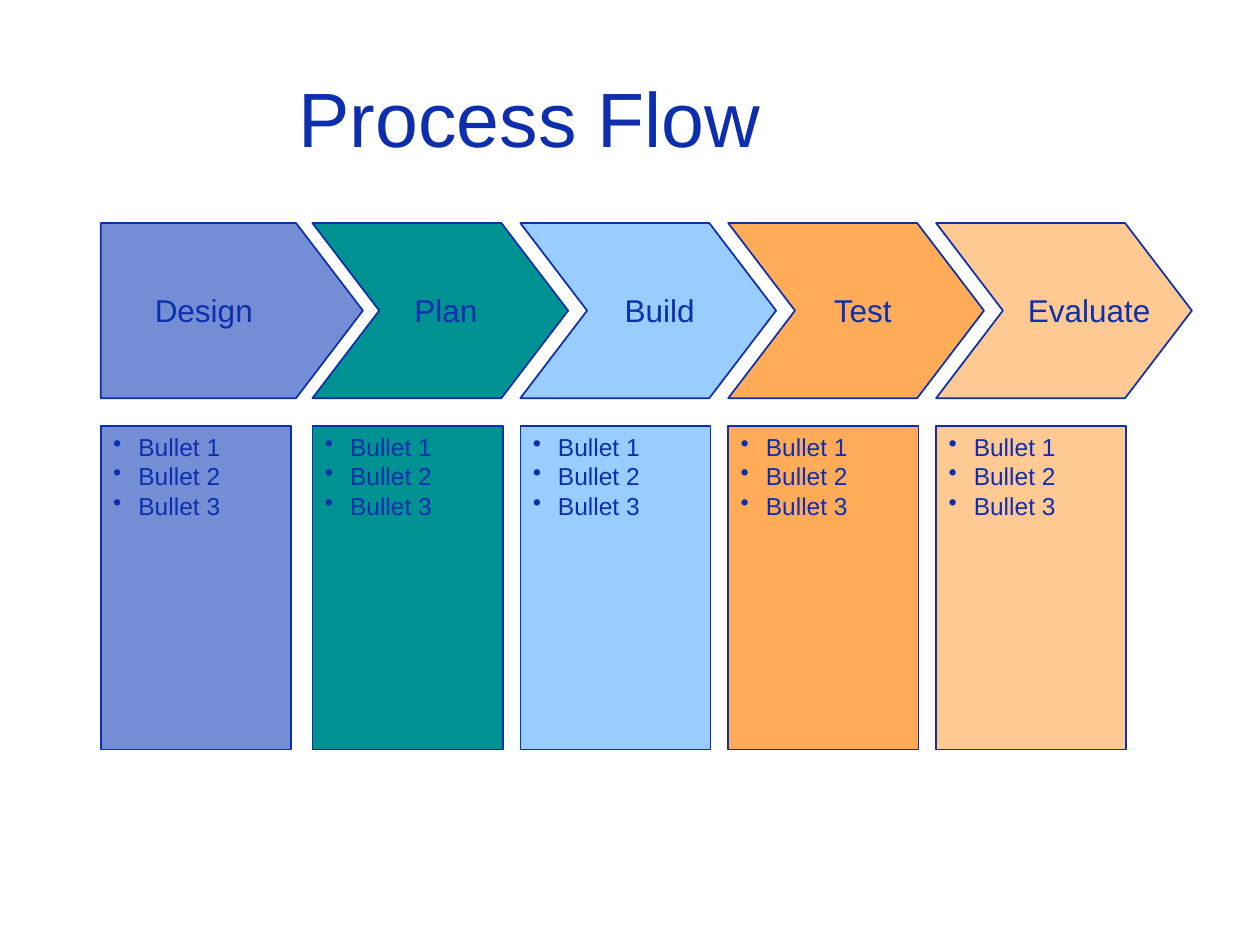
from pptx import Presentation
from pptx.dml.color import RGBColor
from pptx.enum.shapes import MSO_SHAPE
from pptx.enum.text import MSO_ANCHOR, MSO_AUTO_SIZE, PP_ALIGN
from pptx.oxml.xmlchemy import OxmlElement
from pptx.util import Inches, Pt

BLUE = RGBColor(0x0E, 0x2F, 0xAD)
PERIWINKLE = RGBColor(0x74, 0x8E, 0xD6)
TEAL = RGBColor(0x00, 0x91, 0x93)
SKY = RGBColor(0x99, 0xCC, 0xFF)
ORANGE = RGBColor(0xFF, 0xAB, 0x57)
PEACH = RGBColor(0xFF, 0xC9, 0x93)

STAGES = [
    ("Design", PERIWINKLE, 1.13, 0.98),
    ("Plan", TEAL, 3.19, 0.7),
    ("Build", SKY, 4.86, 0.76),
    ("Test", ORANGE, 6.52, 0.69),
    ("Evaluate", PEACH, 8.06, 1.17),
]
BULLETS = ["Bullet 1", "Bullet 2", "Bullet 3"]
FIRST_LEFT, SECOND_LEFT, PITCH = 0.8, 2.48, 1.65
POINT = 0.53


def add_run(p, text, size):
    """Add one run in the slide's font and colour."""
    r = p.add_run()
    r.text = text
    r.font.name = "Arial"
    r.font.size = Pt(size)
    r.font.color.rgb = BLUE


def style_shape(sp, fill):
    """Give a shape its fill and a thin blue outline."""
    sp.shadow.inherit = False
    sp.fill.solid()
    sp.fill.fore_color.rgb = fill
    sp.line.color.rgb = BLUE
    sp.line.width = Pt(1)


def add_title(s, left, top, width, height):
    """Place the centred title."""
    tf = s.shapes.add_textbox(*map(Inches, (left, top, width, height))).text_frame
    tf.word_wrap = True
    tf.vertical_anchor = MSO_ANCHOR.MIDDLE
    p = tf.paragraphs[0]
    p.alignment = PP_ALIGN.CENTER
    add_run(p, "Process Flow", 44)


def add_arrow(s, left, top, width, height, fill, notched):
    """Draw a stage arrow, with a notch in its tail if asked."""
    right, bottom, middle = left + width, top + height, top + height / 2
    points = [(left, top), (right - POINT, top), (right, middle),
              (right - POINT, bottom), (left, bottom)]
    if notched:
        points.append((left + POINT, middle))
    start, *rest = [(Inches(x), Inches(y)) for x, y in points]
    builder = s.shapes.build_freeform(*start)
    builder.add_line_segments(rest, close=True)
    style_shape(builder.convert_to_shape(), fill)


def add_label(s, left, top, width, height, text):
    """Place a stage name."""
    tf = s.shapes.add_textbox(*map(Inches, (left, top, width, height))).text_frame
    tf.word_wrap = False
    tf.auto_size = MSO_AUTO_SIZE.SHAPE_TO_FIT_TEXT
    add_run(tf.paragraphs[0], text, 18)


def add_panel(s, left, top, width, height, fill):
    """Draw a filled panel with its bulleted list."""
    sp = s.shapes.add_shape(MSO_SHAPE.RECTANGLE, *map(Inches, (left, top, width, height)))
    style_shape(sp, fill)
    tf = sp.text_frame
    tf.word_wrap = True
    tf.vertical_anchor = MSO_ANCHOR.TOP
    for i, text in enumerate(BULLETS):
        p = tf.add_paragraph() if i else tf.paragraphs[0]
        p.alignment = PP_ALIGN.LEFT
        pPr = p._p.get_or_add_pPr()
        pPr.set("marL", str(Inches(0.2)))
        pPr.set("indent", str(Inches(-0.2)))
        bullet = OxmlElement("a:buChar")
        bullet.set("char", "•")
        pPr.append(bullet)
        add_run(p, text, 14)


def main():
    """Build the process flow slide."""
    prs = Presentation()
    prs.slide_width, prs.slide_height = Inches(10), Inches(7.5)
    s = prs.slides.add_slide(prs.slide_layouts[6])
    add_title(s, 0.5, 0.3, 7.41, 1.25)
    for i, (name, fill, label_left, label_width) in enumerate(STAGES):
        left = SECOND_LEFT + (i - 1) * PITCH if i else FIRST_LEFT
        add_panel(s, left, 3.38, 1.51, 2.57, fill)
        add_arrow(s, left, 1.77, 2.03 if i else 2.08, 1.39, fill, notched=i > 0)
        add_label(s, label_left, 2.26, label_width, 0.4, name)
    prs.save("out.pptx")


if __name__ == "__main__":
    main()
